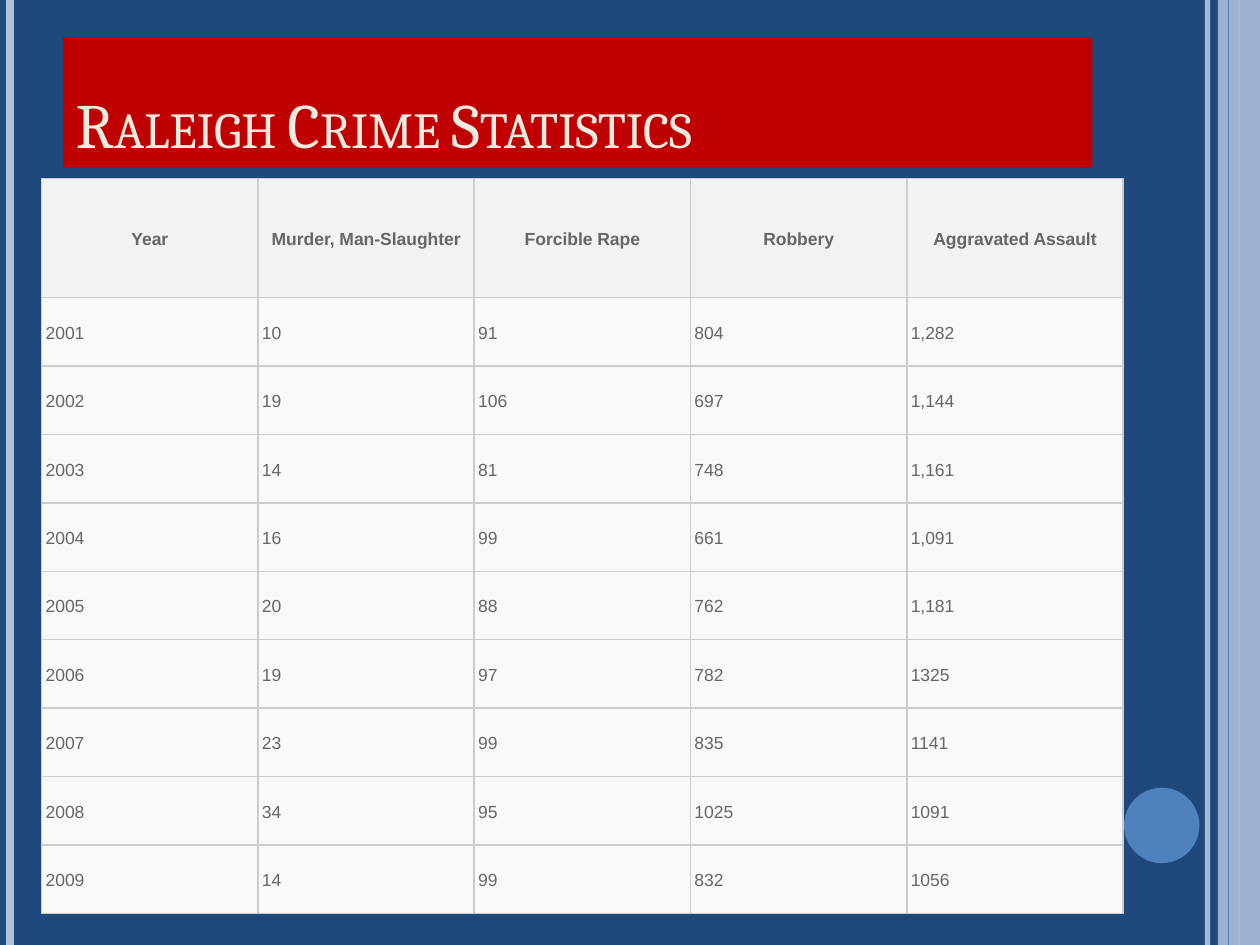
"""Build the Raleigh crime statistics slide with its table."""
from pptx import Presentation
from pptx.dml.color import RGBColor
from pptx.enum.shapes import MSO_CONNECTOR, MSO_SHAPE
from pptx.enum.text import MSO_ANCHOR, MSO_AUTO_SIZE, PP_ALIGN
from pptx.oxml import parse_xml
from pptx.oxml.ns import nsdecls, qn
from pptx.util import Cm, Pt
from lxml.etree import SubElement

NAVY = RGBColor(0x1F, 0x49, 0x7D)
BLUE = RGBColor(0x4F, 0x81, 0xBD)
PALE = RGBColor(0xB3, 0xC1, 0xDB)
RED = RGBColor(0xC0, 0x00, 0x00)
CREAM = RGBColor(0xEE, 0xEC, 0xE1)
GREY = RGBColor(0x66, 0x66, 0x66)
RULE = RGBColor(0xCC, 0xCC, 0xCC)
HEAD = RGBColor(0xF2, 0xF2, 0xF2)
BODY = RGBColor(0xF9, 0xF9, 0xF9)

ROWS = [
    ["Year", "Murder, Man-Slaughter", "Forcible Rape", "Robbery", "Aggravated Assault"],
    ["2001", "10", "91", "804", "1,282"],
    ["2002", "19", "106", "697", "1,144"],
    ["2003", "14", "81", "748", "1,161"],
    ["2004", "16", "99", "661", "1,091"],
    ["2005", "20", "88", "762", "1,181"],
    ["2006", "19", "97", "782", "1325"],
    ["2007", "23", "99", "835", "1141"],
    ["2008", "34", "95", "1025", "1091"],
    ["2009", "14", "99", "832", "1056"],
]


def write(frame, text, font="Arial", size=10, color=GREY, bold=False,
          align=PP_ALIGN.LEFT, space=1.0, caps=False):
    para = frame.paragraphs[0]
    para.alignment = align
    para.line_spacing = space
    run = para.add_run()
    run.text = text
    run.font.name = font
    run.font.size = Pt(size)
    run.font.bold = bold
    run.font.color.rgb = color
    if caps:
        run.font._element.set("cap", "small")


def fade(shape, share):
    color = next(shape._element.spPr.iter(qn("a:srgbClr")))
    SubElement(color, qn("a:alpha")).set("val", str(share * 1000))


deck = Presentation()
deck.slide_width = Cm(25.4)
deck.slide_height = Cm(19.05)
slide = deck.slides.add_slide(deck.slide_layouts[5])
slide.background.fill.solid()
slide.background.fill.fore_color.rgb = NAVY
shapes = slide.shapes

stripes = []
for x, color, width in [(24.34, PALE, 3), (0.21, PALE, 4.5),
                        (24.98, BLUE, 1.5), (24.77, BLUE, 0.75)]:
    stripe = shapes.add_connector(MSO_CONNECTOR.STRAIGHT, Cm(x), Cm(0), Cm(x), Cm(19.05))
    stripe.line.color.rgb = color
    stripe.line.width = Pt(width)
    SubElement(stripe._element.spPr, qn("a:effectLst"))
    stripes.append(stripe)
fade(stripes[0], 93)

band = shapes.add_shape(MSO_SHAPE.RECTANGLE, Cm(24.55), Cm(0), Cm(0.85), Cm(19.05))
disc = shapes.add_shape(MSO_SHAPE.OVAL, Cm(22.66), Cm(15.88), Cm(1.52), Cm(1.52))
for shape, color in [(band, PALE), (disc, BLUE)]:
    shape.shadow.inherit = False
    shape.fill.solid()
    shape.fill.fore_color.rgb = color
    shape.line.fill.background()
fade(band, 87)
stripes[-1]._element.addprevious(band._element)

title = shapes.title
title.left, title.top, title.width, title.height = Cm(1.27), Cm(0.76), Cm(20.75), Cm(2.62)
title.fill.solid()
title.fill.fore_color.rgb = RED
title.text_frame.auto_size = MSO_AUTO_SIZE.NONE
title.text_frame.vertical_anchor = MSO_ANCHOR.BOTTOM
write(title.text_frame, "Raleigh Crime Statistics", font="Cambria", size=36,
      color=CREAM, caps=True)

table = shapes.add_table(len(ROWS), len(ROWS[0]), Cm(0.84), Cm(3.6), Cm(21.8), Cm(14.82)).table
table.horz_banding = False
for col in table.columns:
    col.width = Cm(4.36)
for r, row in enumerate(ROWS):
    top = r == 0
    table.rows[r].height = Cm(2.4 if top else 1.38)
    for c, text in enumerate(row):
        cell = table.cell(r, c)
        cell.margin_left = cell.margin_right = Cm(0.08)
        cell.margin_top = cell.margin_bottom = Cm(0.08)
        cell.vertical_anchor = MSO_ANCHOR.MIDDLE
        for side in "LRTB":
            cell._tc.get_or_add_tcPr().append(parse_xml(
                f'<a:ln{side} {nsdecls("a")} w="{Pt(1)}"><a:solidFill>'
                f'<a:srgbClr val="{RULE}"/></a:solidFill></a:ln{side}>'))
        cell.fill.solid()
        cell.fill.fore_color.rgb = HEAD if top else BODY
        write(cell.text_frame, text, bold=top, space=1.15,
              align=PP_ALIGN.CENTER if top else PP_ALIGN.LEFT)

deck.save("out.pptx")
